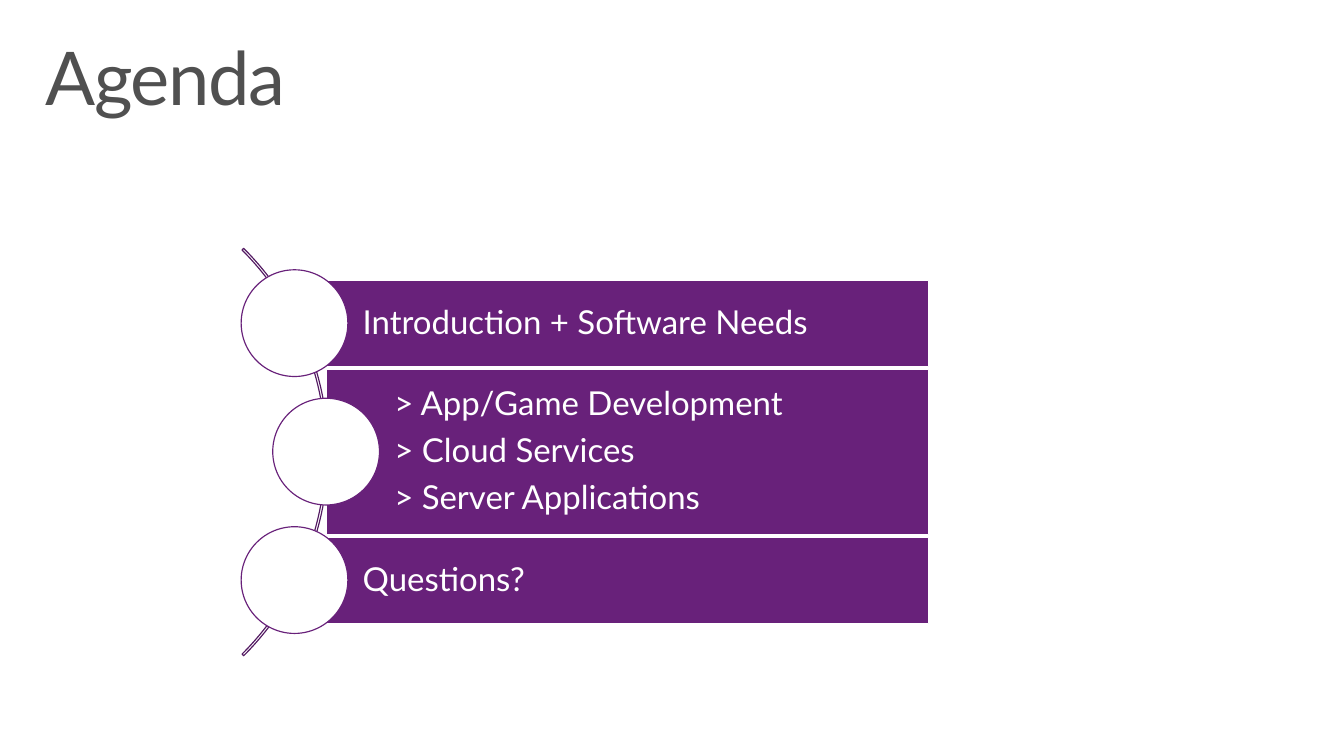
from pptx import Presentation
from pptx.dml.color import RGBColor
from pptx.enum.shapes import MSO_SHAPE as Kind
from pptx.enum.text import MSO_ANCHOR as Anchor, MSO_AUTO_SIZE as Fit, PP_ALIGN as Align
from pptx.util import Pt

SCALE = 9144
INK = {"title": "505050", "bar": "68217A", "arc": "531A62", "white": "FFFFFF"}


class Deck:
    font = "Lato"

    def __init__(self, wide, high):
        self.prs = Presentation()
        self.prs.slide_width = wide * SCALE
        self.prs.slide_height = high * SCALE
        self.slide = self.prs.slides.add_slide(self.prs.slide_layouts[5])

    def color(self, name):
        return RGBColor.from_string(INK[name])

    def text(self, frame, lines, size, ink, pads, anchor, after=0):
        frame.word_wrap = True
        frame.auto_size = Fit.NONE
        frame.vertical_anchor = anchor
        (frame.margin_left, frame.margin_top,
         frame.margin_right, frame.margin_bottom) = [pad * SCALE for pad in pads]
        frame.text = "\n".join(lines)
        for para in frame.paragraphs:
            para.alignment = Align.LEFT
            para.line_spacing = 0.9
            para.space_before = Pt(0)
            para.space_after = Pt(after)
            para.font.name = self.font
            para.font.size = Pt(size)
            para.font.color.rgb = self.color(ink)

    def title(self, label, left, top, wide, high):
        head = self.slide.shapes.title
        head.left, head.top, head.width, head.height = [
            side * SCALE for side in (left, top, wide, high)]
        self.text(head.text_frame, [label], 54, "title", (16, 10, 16, 10), Anchor.TOP)
        run = head.text_frame.paragraphs[0].runs[0]
        run._r.get_or_add_rPr().set("spc", "-100")

    def shape(self, kind, box, fill, line):
        item = self.slide.shapes.add_shape(kind, *[side * SCALE for side in box])
        item.shadow.inherit = False
        if fill:
            item.fill.solid()
            item.fill.fore_color.rgb = self.color(fill)
        else:
            item.fill.background()
        item.line.color.rgb = self.color(line)
        item.line.width = Pt(0.85)
        return item

    def arc(self, left, top, size):
        item = self.shape(Kind.BLOCK_ARC, (left, top, size, size), None, "arc")
        for spot, value in enumerate((189, 27, 0.004)):
            item.adjustments[spot] = value

    def bar(self, lines, left, top, right, high):
        item = self.shape(Kind.RECTANGLE, (left, top, right - left, high), "bar", "white")
        self.text(item.text_frame, lines, 24, "white", (69, 7, 7, 7), Anchor.MIDDLE, 8.4)

    def dot(self, mid, level, size):
        box = (mid - size // 2, level - size // 2, size, size)
        self.shape(Kind.OVAL, box, "white", "bar")


def main():
    deck = Deck(1360, 765)
    deck.title("Agenda", 30, 32, 1300, 100)
    deck.arc(-251, 166, 583)
    topics = [
        (298, 87, ["Introduction + Software Needs"]),
        (330, 167, ["> App/Game Development", "> Cloud Services", "> Server Applications"]),
        (298, 87, ["Questions?"]),
    ]
    for row, (left, high, lines) in enumerate(topics):
        level = 327 + row * 130
        deck.bar(lines, left, level - high // 2, 940, high)
        deck.dot(left, level, 108)
    deck.prs.save("out.pptx")


if __name__ == "__main__":
    main()
